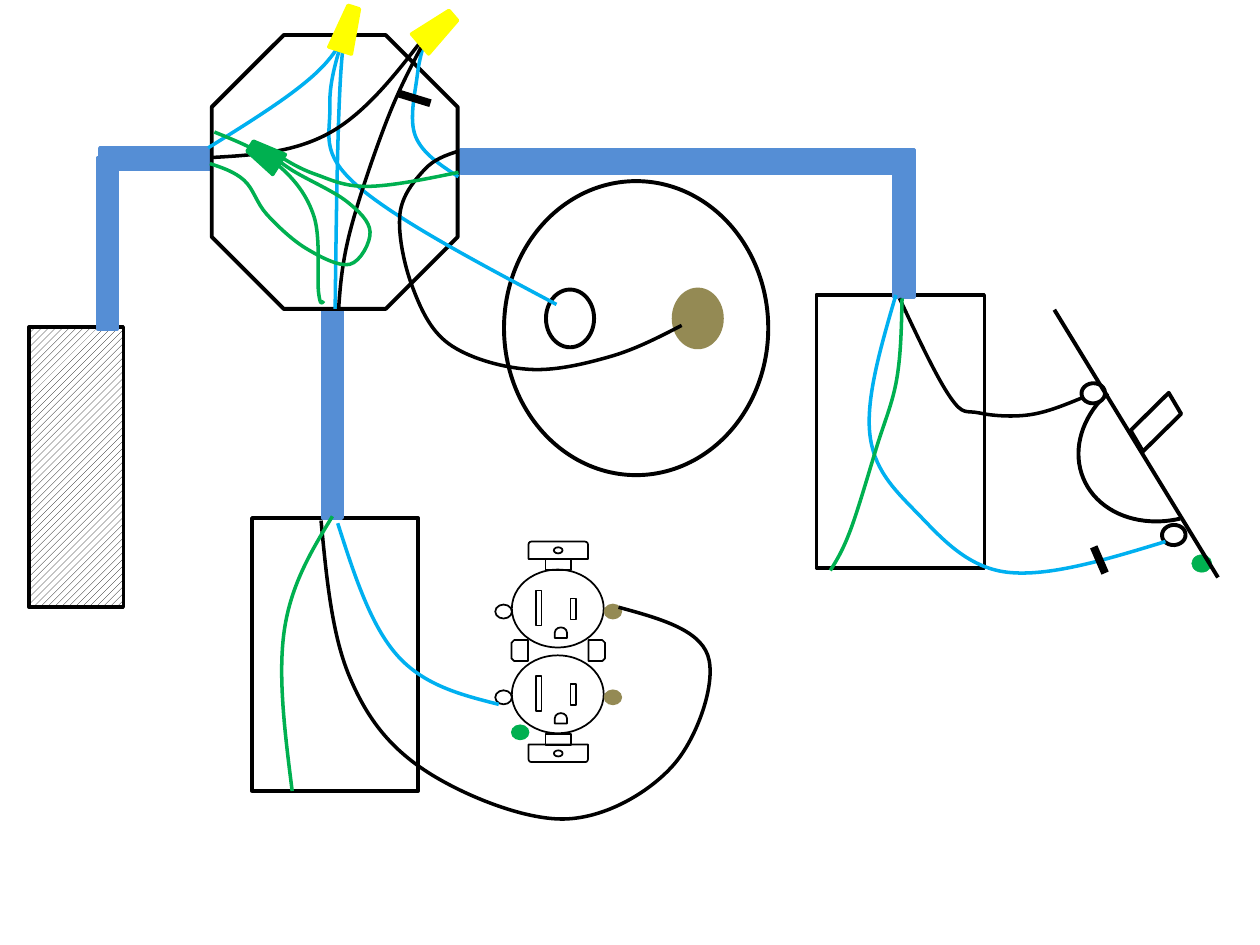
from pptx import Presentation
from pptx.dml.color import RGBColor
from pptx.enum.dml import MSO_PATTERN
from pptx.enum.shapes import MSO_CONNECTOR, MSO_SHAPE
from pptx.oxml.ns import qn
from pptx.oxml.xmlchemy import OxmlElement
from pptx.util import Pt

RECT, OVAL, OCTAGON = MSO_SHAPE.RECTANGLE, MSO_SHAPE.OVAL, MSO_SHAPE.OCTAGON
ARC, TRAPEZOID, KNOB = MSO_SHAPE.ARC, MSO_SHAPE.TRAPEZOID, MSO_SHAPE.PARALLELOGRAM
STRAP, EAR = MSO_SHAPE.ROUND_2_SAME_RECTANGLE, MSO_SHAPE.SNIP_2_SAME_RECTANGLE
GROUND_SLOT = MSO_SHAPE.FLOWCHART_DELAY
HATCH, STRAIGHT = MSO_PATTERN.WIDE_UPWARD_DIAGONAL, MSO_CONNECTOR.STRAIGHT

COLORS = {
    "black": "000000", "white": "FFFFFF", "cable": "558ED5", "neutral": "00B0F0",
    "green": "00B050", "yellow": "FFFF00", "brass": "948A54",
}
RGB = {name: RGBColor.from_string(value) for name, value in COLORS.items()}


def add_part(parent, kind, x, y, w, h, fill=None, line="black", width=2, rot=0):
    sp = parent.shapes.add_shape(kind, Pt(x), Pt(y), Pt(w), Pt(h))
    sp.shadow.inherit = False
    sp.rotation = rot
    if fill:
        sp.fill.solid()
        sp.fill.fore_color.rgb = RGB[fill]
    else:
        sp.fill.background()
    sp.line.color.rgb = RGB[line]
    sp.line.width = Pt(width)
    return sp


def add_wire(slide, color, knots):
    """Draw a smooth wire through the knots, with each tangent parallel to its neighbours' chord."""
    knots = [(Pt(x), Pt(y)) for x, y in knots]
    before, after = [], []
    for (x0, y0), (x, y), (x2, y2) in zip(knots, knots[1:], knots[2:]):
        dx, dy = (x2 - x0) / 6, (y2 - y0) / 6
        before.append((x - dx, y - dy))
        after.append((x + dx, y + dy))
    (x0, y0), (bx, by) = knots[0], before[0]
    (xn, yn), (ax, ay) = knots[-1], after[-1]
    after.insert(0, ((x0 + bx) / 2, (y0 + by) / 2))
    before.append(((xn + ax) / 2, (yn + ay) / 2))
    points = [p for curve in zip(after, before, knots[1:]) for p in curve]

    builder = slide.shapes.build_freeform(*knots[0])
    builder.add_line_segments([(round(x), round(y)) for x, y in points], close=False)
    sp = builder.convert_to_shape()
    sp.shadow.inherit = False
    sp.fill.background()
    sp.line.color.rgb = RGB[color]
    sp.line.width = Pt(2)
    outline = next(sp._element.iter(qn("a:path")))
    segments = outline.findall(qn("a:lnTo"))
    for i in range(0, len(segments), 3):
        curve = OxmlElement("a:cubicBezTo")
        for segment in segments[i:i + 3]:
            curve.append(segment[0])
            outline.remove(segment)
        outline.append(curve)


prs = Presentation()
prs.slide_width, prs.slide_height = Pt(720), Pt(540)
s = prs.slides.add_slide(prs.slide_layouts[6])

# Outlet box, switch box, supply panel
add_part(s, RECT, 144, 296, 95, 156)
add_part(s, RECT, 466.5, 168.5, 96, 156)
panel = add_part(s, RECT, 16.5, 187, 54, 160)
panel.fill.patterned()
panel.fill.pattern = HATCH
panel.fill.fore_color.rgb = RGB["black"]
panel.fill.back_color.rgb = RGB["white"]

# Cables and junction box
for x, y, w, h in [(510.5, 93.5, 12, 76.5), (184.5, 175, 11, 121), (57, 84.5, 64, 12),
                   (263.5, 85.5, 259, 13.5), (56, 90, 11, 98)]:
    add_part(s, RECT, x, y, w, h, fill="cable", line="cable")
add_part(s, OCTAGON, 121, 20, 140.5, 156.5, fill="white", width=2.25)

# Duplex receptacle, mirrored about its centre
outlet = s.shapes.add_group_shape()
cx, cy = 319, 372.5
for y in (325.5, 374.5):
    add_part(outlet, OVAL, 292.5, y, 52.5, 44.5, width=1)
    add_part(outlet, RECT, 306.5, y + 12, 3, 20, width=1)
    add_part(outlet, RECT, 326, y + 16.5, 3, 12, width=1)
    add_part(outlet, GROUND_SLOT, 317.5, y + 32.5, 6, 7, width=1, rot=270)
    add_part(outlet, OVAL, 345.5, y + 20, 9.5, 8, fill="brass", line="brass", width=1)
    add_part(outlet, OVAL, 283, y + 20, 9.5, 8, width=1)
for side, strap_rot, ear_rot in [(-1, 0, 270), (1, 180, 90)]:
    for kind, w, h, offset in [(STRAP, 34, 10, 58), (RECT, 14.5, 6.5, 50),
                               (OVAL, 5, 3.5, 58)]:
        add_part(outlet, kind, cx - w / 2, cy + side * offset - h / 2, w, h,
                 width=1, rot=strap_rot)
    add_part(outlet, EAR, cx + side * 22 - 6, 367, 12, 9.5, width=1, rot=ear_rot)
add_part(outlet, OVAL, 292.5, 414.5, 9.5, 8, fill="green", line="green", width=1)

# Lamp holder
lamp = s.shapes.add_group_shape()
add_part(lamp, OVAL, 288, 103.5, 151, 168, width=2.25)
add_part(lamp, OVAL, 312, 165.5, 27.5, 33, width=2.25)
add_part(lamp, OVAL, 385, 165.5, 27.5, 33, fill="brass", line="brass", width=2.25)

# Switch
switch = s.shapes.add_group_shape()
body = add_part(switch, ARC, 615, 210, 105, 86.5, width=2.25, rot=157.7)
body.adjustments[0], body.adjustments[1] = 169.91, 37.19
for x, y in [(664, 300), (618, 219)]:
    add_part(switch, OVAL, x, y, 13.5, 11.5, fill="white", width=2.25, rot=356)
add_part(switch, KNOB, 643.5, 234.5, 34, 13.5, width=2.25, rot=315.4)
add_part(switch, OVAL, 681, 317, 11.5, 10, fill="green", line="green", width=0.25)

WIRES = {
    "neutral": [
        [(119, 84.5), (182, 40.5), (202.5, 3.5)],
        [(191.5, 176.5), (195, 38), (204, 6)],
        [(201, 8), (188.5, 60.5), (204, 106), (318, 174)],
        [(193, 299), (227, 374.5), (285, 402.5)],
        [(262, 101), (237.5, 78), (238.5, 43), (245, 16.5)],
        [(512, 168.5), (497, 247), (523.5, 292.5), (575.5, 327), (666, 309.5)],
    ],
    "black": [
        [(121, 90), (190, 75), (246, 16.5)],
        [(261.5, 86.5), (242.5, 97), (228.5, 122.5), (235.5, 163.5), (256.5, 196.5),
         (301, 211), (348, 204), (389.5, 186)],
        [(193.5, 176.5), (200, 132.5), (221, 69), (242, 24.5)],
        [(183.5, 297.5), (199.5, 386), (242.5, 440), (322.5, 468), (385, 437),
         (404.5, 374.5), (353.5, 347)],
        [(514, 170.5), (543, 227), (559.5, 236), (588.5, 237), (618, 227.5)],
    ],
    "green": [
        [(185, 172), (182, 167), (179.5, 124), (159, 94.5), (122.5, 75.5)],
        [(262, 98.5), (210, 106.5), (180, 99.5), (158.5, 88.5)],
        [(190, 295), (162.5, 360), (167, 452)],
        [(515.5, 170.5), (512.5, 216.5), (501, 255.5), (486, 303), (474.5, 326)],
        [(120, 93.5), (139.5, 103), (152.5, 122.5), (175, 142), (200, 151),
         (211.5, 132.5), (198, 115), (166.5, 97), (152.5, 85.5)],
    ],
}
for color, wires in WIRES.items():
    for knots in wires:
        add_wire(s, color, knots)

# Switch plate and the marks on re-identified wires
for parent, x1, y1, x2, y2, width in [(switch, 602.5, 177, 696, 330, 2.25),
                                      (s, 228, 53.5, 246, 59, 4.5),
                                      (s, 625, 312.5, 631.5, 327.5, 4.5)]:
    line = parent.shapes.add_connector(STRAIGHT, Pt(x1), Pt(y1), Pt(x2), Pt(y2))
    line.line.color.rgb = RGB["black"]
    line.line.width = Pt(width)
    line._element.spPr.append(OxmlElement("a:effectLst"))

# Wire nuts
for color, x, y, w, h, rot in [("green", 144.5, 79, 13.5, 19.5, 302.5),
                               ("yellow", 242, 4.5, 15, 25, 49.3),
                               ("yellow", 191.5, 3.5, 13.5, 26, 17.5)]:
    add_part(s, TRAPEZOID, x, y, w, h, fill=color, line=color, rot=rot)

prs.save("out.pptx")
